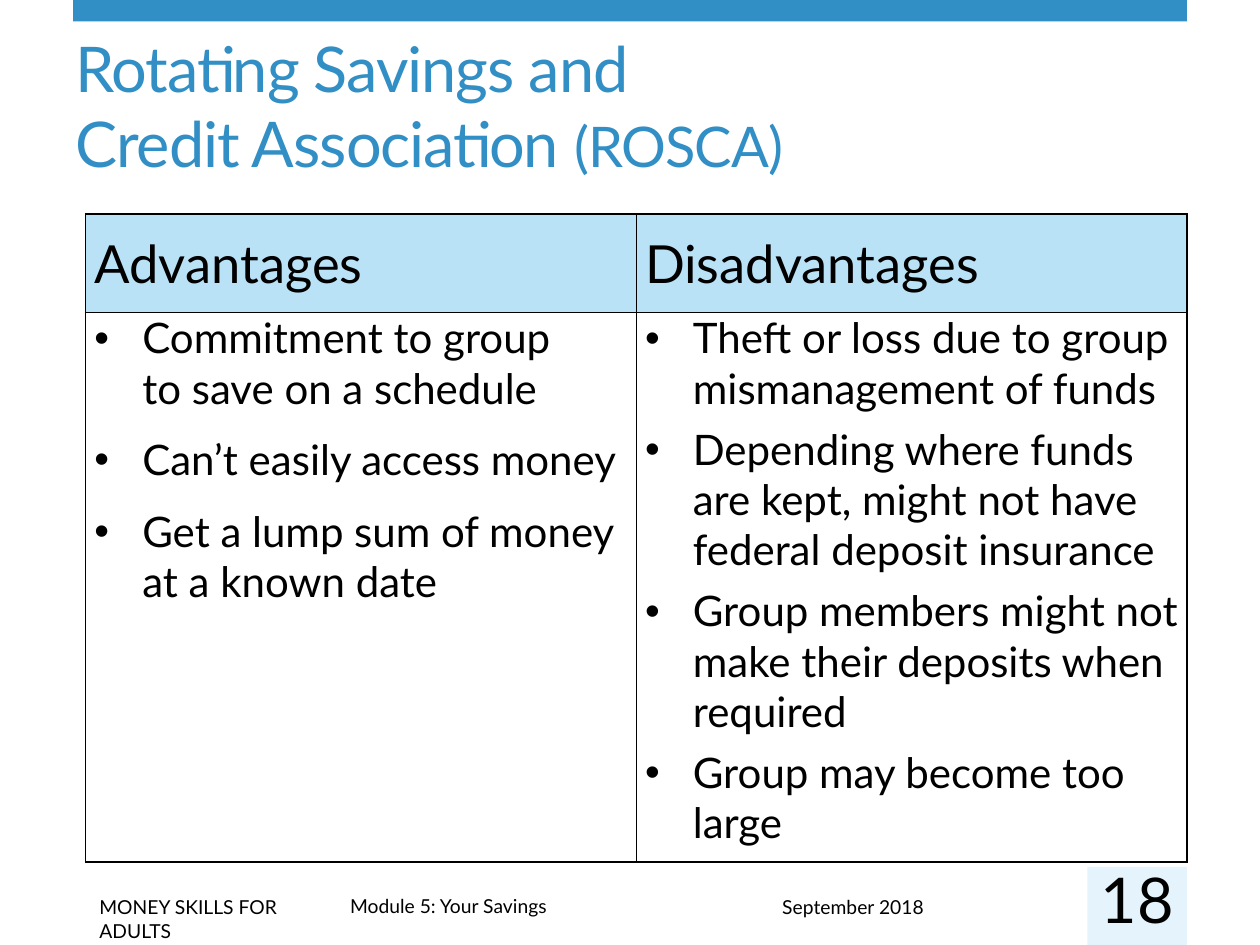
from pptx import Presentation
from pptx.dml.color import RGBColor
from pptx.enum.shapes import MSO_SHAPE
from pptx.enum.text import MSO_ANCHOR, PP_ALIGN
from pptx.oxml import parse_xml
from pptx.oxml.ns import nsdecls
from pptx.util import Inches, Pt

COLORS = {
    "blue": "318FC5",
    "header": "BAE2F7",
    "pale": "E4F3FC",
    "black": "000000",
}

COLUMNS = [
    ("Advantages", 12, [
        "Commitment to group\nto save on a schedule",
        "Can’t easily access money",
        "Get a lump sum of money at a known date",
    ]),
    ("Disadvantages", 6, [
        "Theft or loss due to group mismanagement of funds",
        "Depending where funds are kept, might not have federal deposit insurance",
        "Group members might not make their deposits when required",
        "Group may become too large",
    ]),
]

FOOTERS = [
    ("MONEY SKILLS FOR ADULTS", (0.69, 7.06, 2.09, 0.29)),
    ("Module 5: Your Savings", (2.68, 7.05, 5.66, 0.29)),
    ("September 2018", (6.11, 7.06, 2.52, 0.29)),
]


def add_text(para, text, size=24, color="black", font="Lato", spacing=None):
    for index, line in enumerate(text.split("\n")):
        if index:
            para.add_line_break()
        span = para.add_run()
        span.text = line
        span.font.size = Pt(size)
        span.font.name = font
        span.font.color.rgb = RGBColor.from_string(COLORS[color])
        if spacing is not None:
            span._r.get_or_add_rPr().set("spc", str(round(spacing * 100)))


def add_bullet(para):
    properties = para._p.get_or_add_pPr()
    properties.set("marL", str(Inches(0.38)))
    properties.set("indent", str(-Inches(0.38)))
    properties.append(parse_xml(f'<a:buFont {nsdecls("a")} typeface="Arial"/>'))
    properties.append(parse_xml(f'<a:buChar {nsdecls("a")} char="•"/>'))
    properties.append(parse_xml(
        f'<a:tabLst {nsdecls("a")}><a:tab pos="{Inches(0.5)}" algn="l"/></a:tabLst>'))


class SlideBuilder:
    def __init__(self, page):
        self.page = page

    def rectangle(self, bounds, color):
        shape = self.page.shapes.add_shape(
            MSO_SHAPE.RECTANGLE, *[Inches(value) for value in bounds])
        shape.shadow.inherit = False
        shape.fill.solid()
        shape.fill.fore_color.rgb = RGBColor.from_string(COLORS[color])
        shape.line.fill.background()

    def text(self, bounds, spans, anchor=MSO_ANCHOR.TOP, align=PP_ALIGN.LEFT, inset=True):
        box = self.page.shapes.add_textbox(*[Inches(value) for value in bounds])
        frame = box.text_frame
        frame.word_wrap = True
        frame.vertical_anchor = anchor
        if not inset:
            frame.margin_left = frame.margin_right = 0
            frame.margin_top = frame.margin_bottom = 0
        para = frame.paragraphs[0]
        para.alignment = align
        for text, style in spans:
            add_text(para, text, **style)

    def style_cell(self, cell, fill=None):
        cell.margin_left = cell.margin_right = Inches(0.07)
        cell.margin_top = cell.margin_bottom = 0
        properties = cell._tc.get_or_add_tcPr()
        for side in ("lnL", "lnR", "lnT", "lnB"):
            properties.append(parse_xml(
                f'<a:{side} {nsdecls("a")} w="{Pt(1)}"><a:solidFill>'
                f'<a:srgbClr val="{COLORS["black"]}"/></a:solidFill></a:{side}>'))
        if fill:
            cell.fill.solid()
            cell.fill.fore_color.rgb = RGBColor.from_string(COLORS[fill])
        else:
            cell.fill.background()

    def table(self, bounds, row_heights, columns):
        table = self.page.shapes.add_table(
            2, len(columns), *[Inches(value) for value in bounds]).table
        table.first_row = False
        table.horz_banding = False
        for row, height in zip(table.rows, row_heights):
            row.height = Inches(height)
        for index, (heading, gap, points) in enumerate(columns):
            header, body = table.cell(0, index), table.cell(1, index)
            self.style_cell(header, "header")
            header.vertical_anchor = MSO_ANCHOR.MIDDLE
            para = header.text_frame.paragraphs[0]
            para.space_after = Pt(12)
            add_text(para, heading, size=30)
            self.style_cell(body)
            frame = body.text_frame
            for number, point in enumerate(points):
                para = frame.add_paragraph() if number else frame.paragraphs[0]
                add_bullet(para)
                para.space_after = Pt(gap)
                add_text(para, point)


def main():
    deck = Presentation()
    deck.slide_width, deck.slide_height = Inches(10), Inches(7.5)
    builder = SlideBuilder(deck.slides.add_slide(deck.slide_layouts[6]))

    builder.rectangle((0.58, 0, 8.84, 0.17), "blue")
    builder.rectangle((8.63, 6.88, 0.79, 0.62), "pale")
    for text, bounds in FOOTERS:
        builder.text(bounds, [(text, {"size": 11})])

    title_style = {"color": "blue", "spacing": -0.6}
    builder.text((0.5, 0.25, 9.18, 1.23), [
        ("Rotating Savings and\nCredit Association ", {"size": 36, **title_style}),
        ("(ROSCA)", {"size": 32, **title_style}),
    ], anchor=MSO_ANCHOR.BOTTOM)
    builder.table((0.68, 1.7, 8.74, 5.14), (0.78, 4.36), COLUMNS)
    builder.text((8.63, 6.83, 0.79, 0.45), [("18", {"size": 36})],
                 align=PP_ALIGN.CENTER, inset=False)

    deck.save("out.pptx")


if __name__ == "__main__":
    main()
